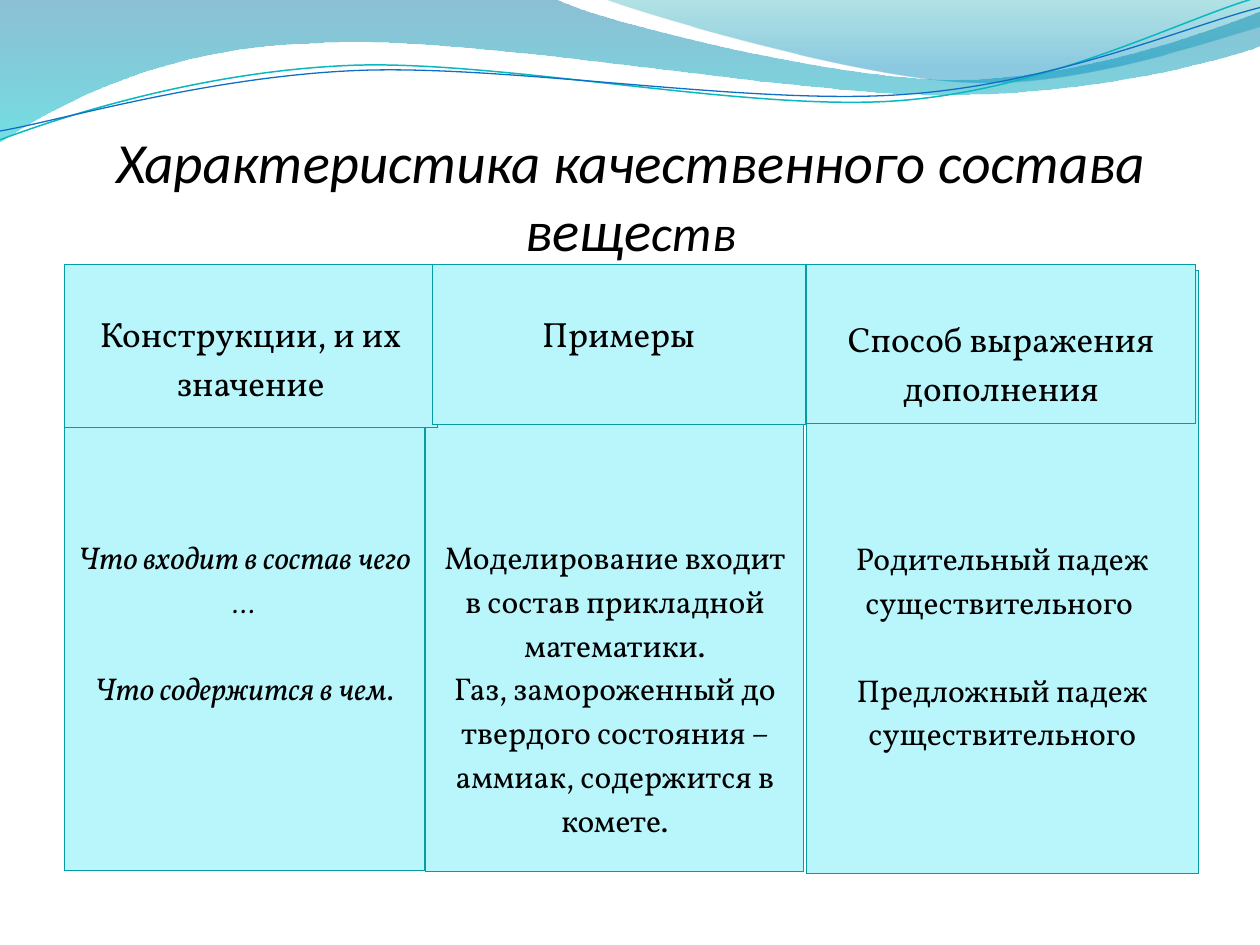
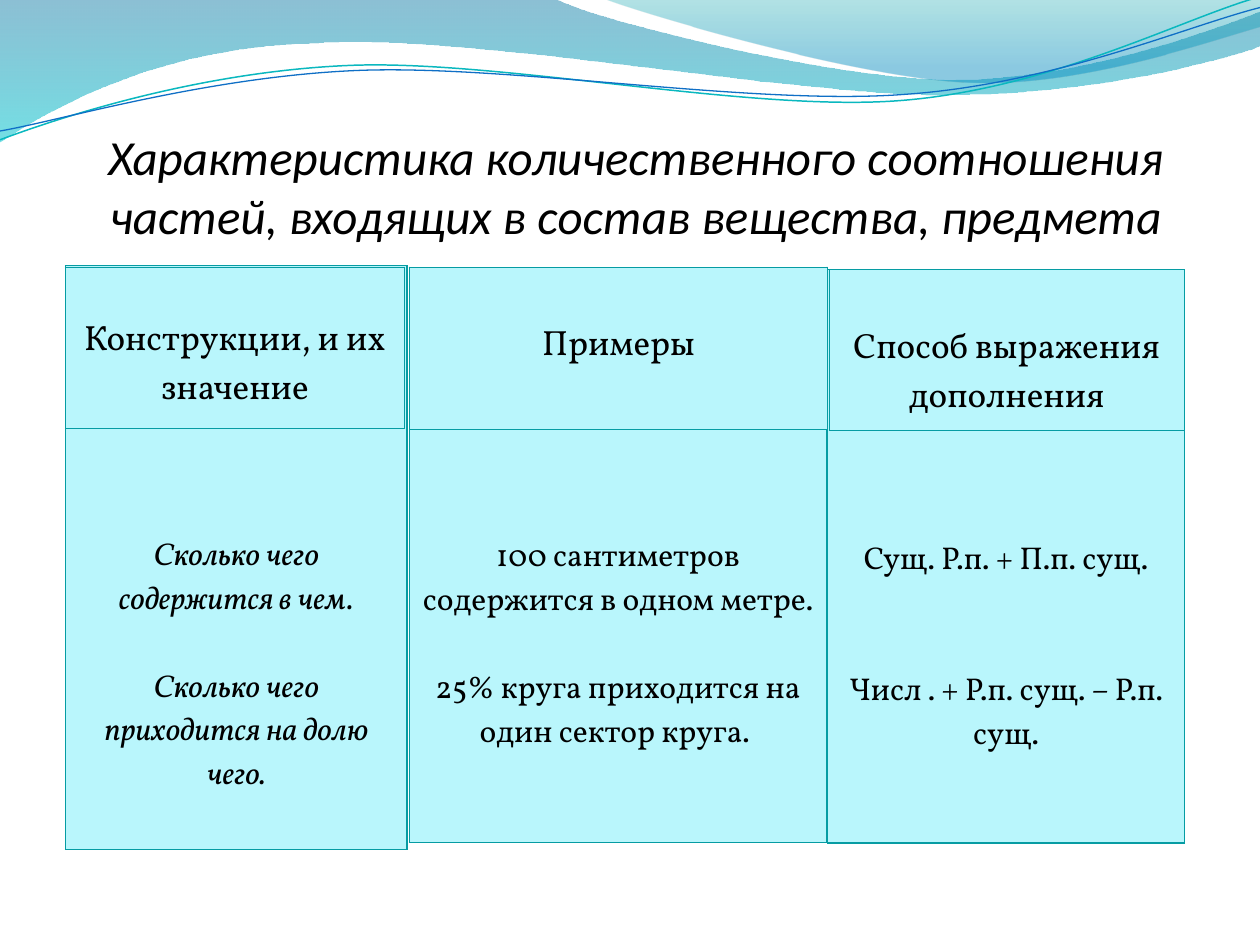
"""Build two slides comparing grammatical constructions in three-column tables."""
from lxml import etree
from pptx import Presentation
from pptx import util as u
from pptx.dml.color import RGBColor
from pptx.enum import text
from pptx.oxml import ns

COLORS = {"ink": "000000", "cell": "B9F6FC", "border": "069CA3",
          "blue": "0074A1", "aqua": "00C6CF", "teal": "00A1A9", "sky": "008BBF",
          "teal_line": "0AB8BF", "blue_line": "0F6FC6"}
BODY_TOP = 2.14
LINE = 25

BANDS = [
    {"path": [(0, 0), (4.4, -0.01), (4.76, 0.17, 6.64, 0.63, 7.58, 0.63),
              (8.53, 0.63, 9.58, 0.26, 10, 0.09), (10.01, 0.36),
              (9.83, 0.44, 8.7, 0.76, 7.46, 0.75), (6.22, 0.75, 3.82, 0.28, 2.57, 0.34),
              (1.29, 0.36, 0.46, 0.83, -0.01, 1.13), (0, 0)],
     "stops": [("blue", 0, 45), ("aqua", 1, 55)]},
    {"path": [(4.79, -0.01), (5.09, 0.11, 6.82, 0.62, 7.69, 0.65),
              (8.56, 0.69, 9.61, 0.32, 10, 0.21), (10, 0), (4.79, -0.01)],
     "stops": [("teal", 0, 30), ("sky", 0.8, 45)]},
    {"path": [(0, 1.11), (0.48, 0.93, 1.58, 0.57, 2.77, 0.52),
              (3.95, 0.47, 5.93, 0.89, 7.13, 0.8), (8.33, 0.71, 9.38, 0.15, 9.98, -0.02)],
     "line": ("teal_line", 0.85)},
    {"path": [(0, 1.04), (0.47, 0.96, 1.64, 0.61, 2.83, 0.56),
              (4.03, 0.51, 5.97, 0.84, 7.17, 0.75), (8.36, 0.67, 9.41, 0.21, 10, 0.06)],
     "line": ("blue_line", 0.75)},
]

HEADERS = ["Конструкции, и их значение", "Примеры", "Способ выражения дополнения"]

SLIDES = [
    {"title": [("Характеристика качественного состава веще", 32.4), ("ств", 28.8)],
     "title_at": (0.51, 1.15, 8.99, 0.94),
     "body_at": [(0.51, 2.14, 2.86, 4.77), (3.38, 2.14, 3, 4.78), (6.4, 2.15, 3.11, 4.78)],
     "header_at": [(0.51, 2.1, 2.96, 1.29), (3.43, 2.1, 2.96, 1.27), (6.4, 2.1, 3.09, 1.26)],
     "header_top": [0.39, 0.39, 0.43],
     "body": [["Что входит в состав чего …", "Что содержится в чем."],
              ["Моделирование входит в состав прикладной математики.",
               "Газ, замороженный до твердого состояния – аммиак, содержится в комете."],
              ["Родительный падеж существительного ", "Предложный падеж существительного"]],
     "gap_lines": [1, 0, 1]},
    {"title": [("Характеристика количественного соотношения частей, "
                "входящих в состав вещества, предмета", 28)],
     "title_at": (0.28, 0, 9.53, 1.94),
     "body_at": [(0.52, 2.11, 2.71, 4.63), (3.25, 2.12, 3.31, 4.57), (6.57, 2.14, 2.83, 4.55)],
     "header_at": [(0.52, 2.12, 2.69, 1.28), (3.25, 2.12, 3.32, 1.29), (6.58, 2.14, 2.82, 1.28)],
     "header_top": [0.4, 0.44, 0.44],
     "body": [["Сколько чего содержится в чем.", "Сколько чего приходится на долю чего."],
              ["100 сантиметров содержится в одном метре. ",
               "25% круга приходится на один сектор круга. "],
              ["Сущ. Р.п. + П.п. сущ.", "Числ . + Р.п. сущ. – Р.п. сущ."]],
     "gap_lines": [1, 1, 2]},
]


def write(p, words, size=18, font="Vollkorn", italic=False, before=0):
    p.alignment = text.PP_ALIGN.CENTER
    p.space_before = u.Pt(before)
    r = p.add_run()
    r.text = words
    r.font.size, r.font.name, r.font.italic = u.Pt(size), font, italic
    r.font.bold = False
    r.font.color.rgb = RGBColor.from_string(COLORS["ink"])


def add_box(s, at, lines, top, gap=0, **fmt):
    tbl = s.shapes.add_table(1, 1, *[u.Inches(v) for v in at]).table
    tbl.first_row = tbl.horz_banding = False
    cell = tbl.cell(0, 0)
    cell.margin_top = u.Inches(top)
    cell.fill.solid()
    cell.fill.fore_color.rgb = RGBColor.from_string(COLORS["cell"])
    tc_pr = cell._tc.get_or_add_tcPr()
    for i, side in enumerate(("a:lnL", "a:lnR", "a:lnT", "a:lnB")):
        ln = etree.Element(ns.qn(side), w=str(u.Pt(0.75)))
        fill = etree.SubElement(ln, ns.qn("a:solidFill"))
        etree.SubElement(fill, ns.qn("a:srgbClr"), val=COLORS["border"])
        tc_pr.insert(i, ln)
    tf = cell.text_frame
    for i, words in enumerate(lines):
        p = tf.add_paragraph() if i else tf.paragraphs[0]
        write(p, words, before=gap if i else 0, **fmt)


prs = Presentation()
prs.slide_width, prs.slide_height = u.Inches(10), u.Inches(7.5)
layout = prs.slide_layouts[5]

for data in SLIDES:
    s = prs.slides.add_slide(layout)
    title = s.shapes.title
    title.left, title.top, title.width, title.height = [u.Inches(v) for v in data["title_at"]]
    tf = title.text_frame
    tf.word_wrap, tf.auto_size = True, text.MSO_AUTO_SIZE.NONE
    tf.vertical_anchor = text.MSO_ANCHOR.BOTTOM
    tf.margin_left = tf.margin_right = tf.margin_bottom = 0
    tf.margin_top = u.Inches(0.05)
    for words, size in data["title"]:
        write(tf.paragraphs[0], words, size=size, font="Calibri", italic=True)

    for col, at in enumerate(data["body_at"]):
        add_box(s, at, data["body"][col], BODY_TOP,
                gap=LINE * data["gap_lines"][col], italic=col == 0)
    for at, words, top in zip(data["header_at"], HEADERS, data["header_top"]):
        add_box(s, at, [words], top, size=20)

s = prs.slides[0]
for n, band in enumerate(BANDS):
    ends = [(u.Inches(seg[-2]), u.Inches(seg[-1])) for seg in band["path"]]
    builder = s.shapes.build_freeform(*ends[0], scale=1.0)
    builder.add_line_segments(ends[1:], close="stops" in band)
    sp = builder.convert_to_shape()
    sp.shadow.inherit = False
    sides = list(sp._element.iter(ns.qn("a:lnTo")))
    for side, seg in zip(sides, band["path"][1:]):
        if len(seg) == 6:
            curve = etree.Element(ns.qn("a:cubicBezTo"))
            for x, y in zip(seg[::2], seg[1::2]):
                etree.SubElement(curve, ns.qn("a:pt"), x=str(u.Inches(x) - sp.left),
                                 y=str(u.Inches(y) - sp.top))
            side.getparent().replace(side, curve)
    if "stops" in band:
        sp.line.fill.background()
        sp.fill.gradient()
        sp.fill.gradient_angle = 270
        for stop, (name, position, alpha) in zip(sp.fill.gradient_stops, band["stops"]):
            stop.color.rgb = RGBColor.from_string(COLORS[name])
            stop.position = position
        for clr, (name, position, alpha) in zip(sp._element.iter(ns.qn("a:srgbClr")), band["stops"]):
            etree.SubElement(clr, ns.qn("a:alpha"), val=str(alpha * 1000))
    else:
        name, width = band["line"]
        sp.fill.background()
        sp.line.color.rgb = RGBColor.from_string(COLORS[name])
        sp.line.width = u.Pt(width)
    prs.slide_master.shapes._spTree.insert(2 + n, sp._element)

prs.save("out.pptx")
